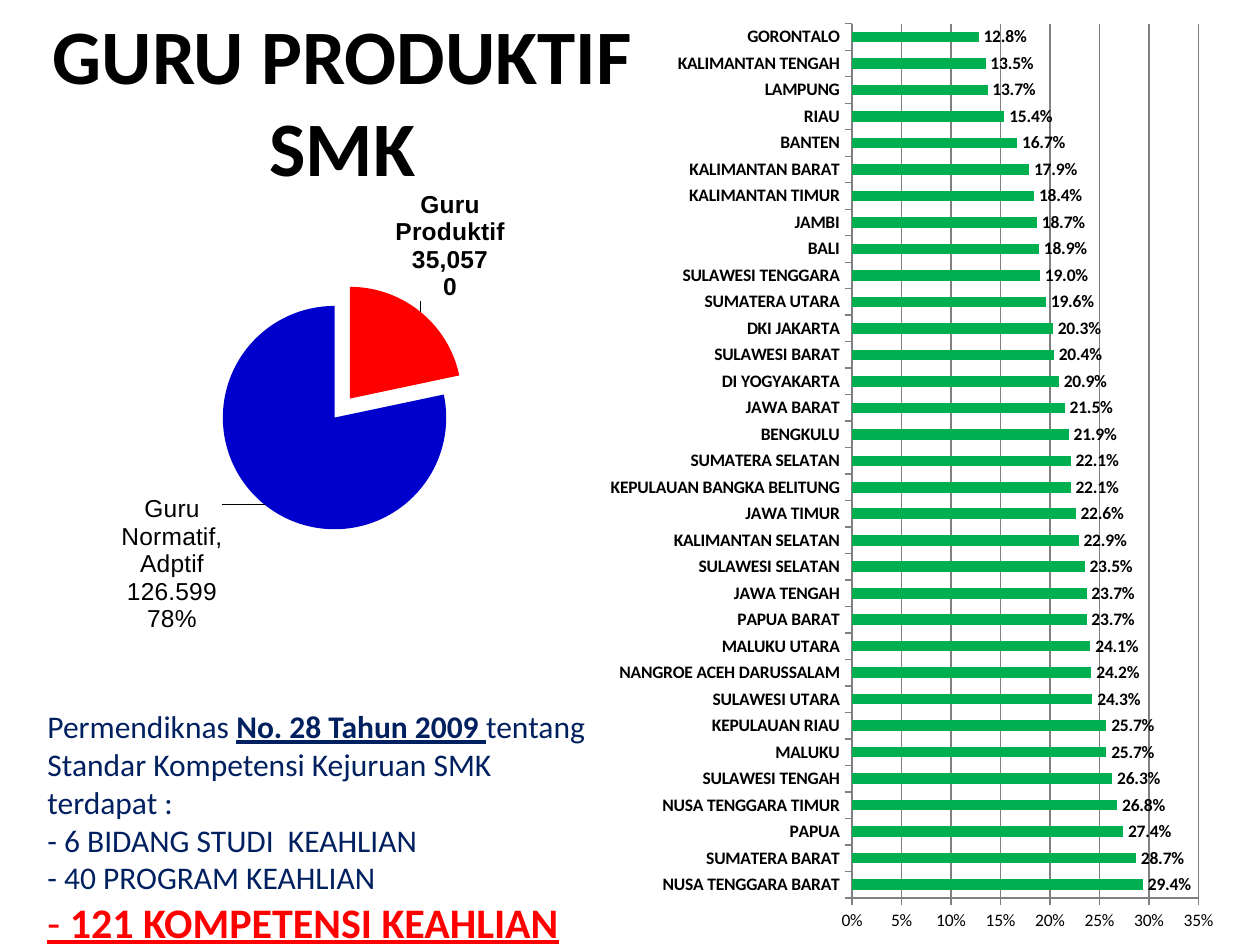
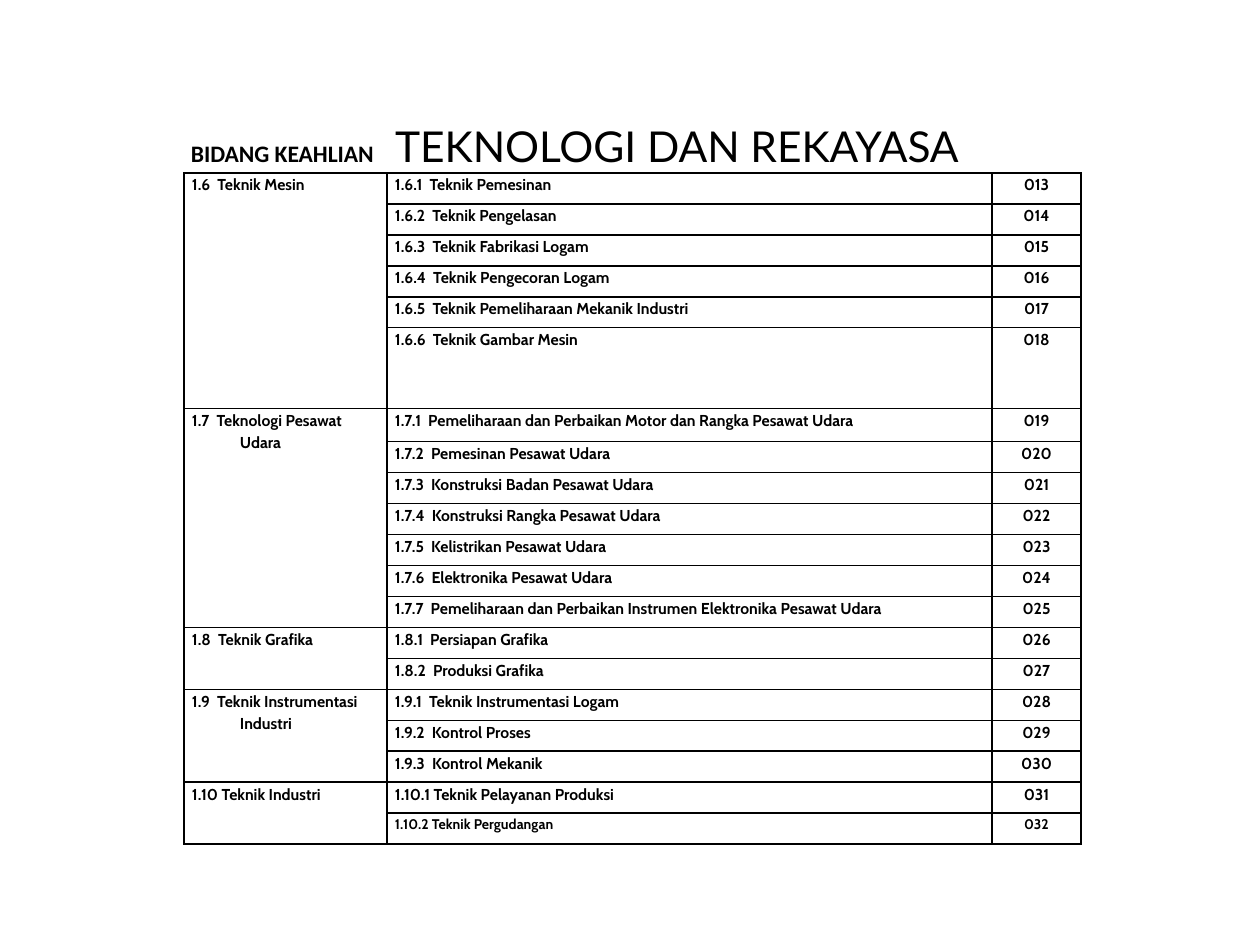
from dataclasses import dataclass

from lxml import etree
from pptx import Presentation
from pptx.chart.data import CategoryChartData
from pptx.dml.color import RGBColor
from pptx.enum.chart import XL_CHART_TYPE, XL_LABEL_POSITION, XL_TICK_MARK
from pptx.enum.text import MSO_ANCHOR, PP_ALIGN
from pptx.oxml.ns import qn
from pptx.util import Emu, Pt

PX = 914400 / 126
BAR, PIE = XL_CHART_TYPE.BAR_CLUSTERED, XL_CHART_TYPE.PIE
OUTER = XL_LABEL_POSITION.OUTSIDE_END
TICK_OUT, TICK_OFF = XL_TICK_MARK.OUTSIDE, XL_TICK_MARK.NONE
TOP, MIDDLE = MSO_ANCHOR.TOP, MSO_ANCHOR.MIDDLE
LEFT, CENTER = PP_ALIGN.LEFT, PP_ALIGN.CENTER


@dataclass(frozen=True)
class Theme:
    black: str = "000000"
    navy: str = "002060"
    red: str = "FF0000"
    blue: str = "0000CC"
    green: str = "00B050"
    gray: str = "808080"
    body: str = "Calibri"
    grid: str = "Cabin"
    label: str = "Arial"
    light: str = "Lato"
    title: float = 44
    text: float = 18
    strong: float = 24
    axis: float = 10
    slice: float = 14
    cell: float = 9
    small: float = 8


THEME = Theme()


def px(n):
    return Emu(round(n * PX))


def style(font, size=THEME.axis, face=THEME.body, color=THEME.black,
          bold=False, under=False):
    font.size, font.name, font.bold = Pt(size), face, bold
    font.color.rgb = RGBColor.from_string(color)
    if under:
        font.underline = True


def put(para, text, **form):
    """Add one run of text to a paragraph."""
    run = para.add_run()
    run.text = text
    style(run.font, **form)


def add(parent, tag, **attrs):
    return etree.SubElement(parent, qn(tag), attrs)


def layout(x, y, w=None, h=None):
    """Chart layout; with a size it frames the plot, else it shifts a label."""
    root = etree.Element(qn("c:layout"))
    man = add(root, "c:manualLayout")
    if w:
        add(man, "c:layoutTarget", val="inner")
        add(man, "c:xMode", val="edge")
        add(man, "c:yMode", val="edge")
    for key, val in zip("xywh", (x, y, w, h)):
        if val is not None:
            add(man, f"c:{key}", val=str(val))
    return root


class Deck:
    def __init__(self, theme):
        self.theme = theme
        self.prs = Presentation()
        self.prs.slide_width, self.prs.slide_height = px(1260), px(945)
        self.slide = None

    def page(self):
        self.slide = self.prs.slides.add_slide(self.prs.slide_layouts[6])

    def text(self, box, paras, anchor=TOP, align=LEFT):
        """Each paragraph is a list of (text, format) runs."""
        frame = self.slide.shapes.add_textbox(*map(px, box)).text_frame
        frame.word_wrap, frame.vertical_anchor = True, anchor
        for i, runs in enumerate(paras):
            para = frame.add_paragraph() if i else frame.paragraphs[0]
            para.alignment = align
            for words, form in runs:
                put(para, words, **form)

    def title(self, box, runs):
        self.text(box, [runs], MIDDLE, CENTER)

    def chart(self, kind, box, names, vals, plot, form):
        data = CategoryChartData(number_format=form)
        data.categories = names
        data.add_series("Series 1", vals)
        chart = self.slide.shapes.add_chart(kind, *map(px, box), data).chart
        chart.has_legend = chart.has_title = False
        style(chart.font)
        area = chart.plots[0]
        area.vary_by_categories = kind == PIE
        root = chart._chartSpace.chart.plotArea
        for old in root.findall(qn("c:layout")):
            root.remove(old)
        root.insert(0, layout(*plot))
        return chart, area.series[0]

    def bars(self, box, names, vals, plot):
        chart, series = self.chart(BAR, box, names, vals, plot, "0.0%")
        chart.plots[0].gap_width = 150
        series.format.fill.solid()
        series.format.fill.fore_color.rgb = RGBColor.from_string(self.theme.green)
        tags = series.data_labels
        tags.show_value, tags.position = True, OUTER
        tags.number_format, tags.number_format_is_linked = "0.0%", False
        style(tags.font, bold=True)
        cat, val = chart.category_axis, chart.value_axis
        val.minimum_scale, val.maximum_scale, val.major_unit = 0, 0.35, 0.05
        val.has_major_gridlines = True
        val.tick_labels.number_format = "0%"
        val.tick_labels.number_format_is_linked = False
        for axis in (cat, val):
            axis.major_tick_mark, axis.minor_tick_mark = TICK_OUT, TICK_OFF
            style(axis.tick_labels.font, bold=axis is cat)
        for part in (cat, val, val.major_gridlines):
            part.format.line.color.rgb = RGBColor.from_string(self.theme.gray)
            part.format.line.width = Pt(0.75)

    def pie(self, box, names, vals, plot, hues, note, shifts):
        _, series = self.chart(PIE, box, names, vals, plot, "#,##0")
        root = series._element
        burst = etree.Element(qn("c:explosion"), val="11")
        root.find(qn("c:tx")).addnext(burst)
        for i, hue in enumerate(hues):
            fill = series.points[i].format.fill
            fill.solid()
            fill.fore_color.rgb = RGBColor.from_string(hue)
        look = dict(size=self.theme.slice, face=self.theme.label)
        tags = series.data_labels
        tags.show_value = tags.show_category_name = tags.show_percentage = True
        tags.number_format, tags.number_format_is_linked = "#,##0", False
        style(tags.font, bold=True, **look)
        # First label keeps its fields, the second has its own words
        first, last = (series.points[i].data_label for i in range(2))
        style(first.font, bold=True, **look)
        frame = last.text_frame
        for i, line in enumerate(note):
            para = frame.add_paragraph() if i else frame.paragraphs[0]
            put(para, line, **look)
        for tag in (first, last):
            tag.position = OUTER
        for tag, shift in zip(root.iter(qn("c:dLbl")), shifts):
            tag.find(qn("c:idx")).addnext(layout(*shift))
            for key in ("c:showVal", "c:showCatName", "c:showPercent"):
                tag.find(qn(key)).set("val", "1")
            add(tag, "c:separator").text = "\n"

    def cell(self, cell, text, align=LEFT, size=THEME.cell):
        cell.fill.background()
        cell.margin_left = cell.margin_right = px(8)
        cell.margin_top = cell.margin_bottom = 0
        para = cell.text_frame.paragraphs[0]
        para.alignment, para.line_spacing = align, 1.15
        para.space_before = para.space_after = Pt(3)
        if align == LEFT:
            props = para._p.get_or_add_pPr()
            props.set("marL", str(px(48)))
            props.set("indent", str(px(-48)))
        put(para, text, size=size, face=self.theme.grid, bold=True)
        props = cell._tc.get_or_add_tcPr()
        for i, side in enumerate(("a:lnL", "a:lnR", "a:lnT", "a:lnB")):
            line = etree.Element(qn(side), w=str(Pt(1)))
            add(add(line, "a:solidFill"), "a:srgbClr", val=self.theme.black)
            props.insert(i, line)

    def table(self, spot, cols, rows, groups, start):
        """Merge the first column by group and number the items on the right."""
        size = (sum(cols), sum(rows))
        table = self.slide.shapes.add_table(
            len(rows), len(cols), *map(px, spot + size)).table
        table.first_row = table.horz_banding = False
        for part, sizes in ((table.columns, cols), (table.rows, rows)):
            for item, n in zip(part, sizes):
                if part is table.columns:
                    item.width = px(n)
                else:
                    item.height = px(n)
        row = 0
        for head, items in groups:
            table.cell(row, 0).merge(table.cell(row + len(items) - 1, 0))
            for i, item in enumerate(items):
                last = row == len(rows) - 1
                small = self.theme.small if last else self.theme.cell
                self.cell(table.cell(row, 0), "" if i else head)
                self.cell(table.cell(row, 1), item, size=small)
                self.cell(table.cell(row, 2), f"{start + row:03}", CENTER, small)
                row += 1


# Share of vocational teachers by province, bottom bar first
SHARES = {
    "NUSA TENGGARA BARAT": 0.294, "SUMATERA BARAT": 0.287, "PAPUA": 0.274,
    "NUSA TENGGARA TIMUR": 0.268, "SULAWESI TENGAH": 0.263, "MALUKU": 0.257,
    "KEPULAUAN RIAU": 0.257, "SULAWESI UTARA": 0.243,
    "NANGROE ACEH DARUSSALAM": 0.242, "MALUKU UTARA": 0.241,
    "PAPUA BARAT": 0.237, "JAWA TENGAH": 0.237, "SULAWESI SELATAN": 0.235,
    "KALIMANTAN SELATAN": 0.229, "JAWA TIMUR": 0.226,
    "KEPULAUAN BANGKA BELITUNG": 0.221, "SUMATERA SELATAN": 0.221,
    "BENGKULU": 0.219, "JAWA BARAT": 0.215, "DI YOGYAKARTA": 0.209,
    "SULAWESI BARAT": 0.204, "DKI JAKARTA": 0.203, "SUMATERA UTARA": 0.196,
    "SULAWESI TENGGARA": 0.19, "BALI": 0.189, "JAMBI": 0.187,
    "KALIMANTAN TIMUR": 0.184, "KALIMANTAN BARAT": 0.179, "BANTEN": 0.167,
    "RIAU": 0.154, "LAMPUNG": 0.137, "KALIMANTAN TENGAH": 0.135,
    "GORONTALO": 0.128,
}

GROUPS = [
    ("1.6  Teknik Mesin", [
        "1.6.1  Teknik Pemesinan", "1.6.2  Teknik Pengelasan",
        "1.6.3  Teknik Fabrikasi Logam", "1.6.4  Teknik Pengecoran Logam",
        "1.6.5  Teknik Pemeliharaan Mekanik Industri",
        "1.6.6  Teknik Gambar Mesin"]),
    ("1.7  Teknologi Pesawat Udara", [
        "1.7.1  Pemeliharaan dan Perbaikan Motor dan Rangka Pesawat Udara",
        "1.7.2  Pemesinan Pesawat Udara",
        "1.7.3  Konstruksi Badan Pesawat Udara",
        "1.7.4  Konstruksi Rangka Pesawat Udara",
        "1.7.5  Kelistrikan Pesawat Udara",
        "1.7.6  Elektronika Pesawat Udara",
        "1.7.7  Pemeliharaan dan Perbaikan Instrumen Elektronika Pesawat Udara"]),
    ("1.8  Teknik Grafika", [
        "1.8.1  Persiapan Grafika", "1.8.2  Produksi Grafika"]),
    ("1.9  Teknik Instrumentasi Industri", [
        "1.9.1  Teknik Instrumentasi Logam", "1.9.2  Kontrol Proses",
        "1.9.3  Kontrol Mekanik"]),
    ("1.10 Teknik Industri", [
        "1.10.1 Teknik Pelayanan Produksi", "1.10.2 Teknik Pergudangan"]),
]


def staff(deck):
    theme = deck.theme
    deck.page()
    deck.title((25, -4, 635, 208),
               [("GURU PRODUKTIF SMK", dict(size=theme.title, bold=True))])
    deck.bars((600, 5, 630, 940), list(SHARES), list(SHARES.values()),
              (0.4, 0.02, 0.55, 0.93))
    deck.pie((-35, 175, 740, 496),
             ["Guru Produktif", "Guru Normatif, Adptif"], [35057, 126599],
             (0.34, 0.22, 0.34, 0.5), (theme.red, theme.blue),
             ("Guru", "Normatif,", "Adptif", "126.599", "78%"),
             ((-0.04, -0.01), (-0.05, -0.03)))
    # Rule and its three counts
    plain = dict(size=theme.text, color=theme.navy)
    alert = dict(size=theme.strong, color=theme.red, under=True)
    deck.text((35, 701, 586, 217), [
        [("Permendiknas ", plain),
         ("No. 28 Tahun 2009 ", dict(plain, bold=True, under=True)),
         ("tentang Standar Kompetensi Kejuruan SMK terdapat :", plain)],
        [("- 6 BIDANG STUDI  KEAHLIAN", plain)],
        [("- 40 PROGRAM KEAHLIAN", plain)],
        [("- ", alert), ("121 KOMPETENSI KEAHLIAN", dict(alert, bold=True))],
    ])


def fields(deck):
    deck.page()
    deck.table((184, 173), (203, 605, 89),
               [31] * 5 + [81, 33] + [31] * 13, GROUPS, 13)
    deck.title((52, 118, 1046, 52), [
        ("BIDANG KEAHLIAN", dict(size=13.5, bold=True)),
        ("  ", dict(size=27, bold=True)),
        ("TEKNOLOGI DAN REKAYASA", dict(size=24.3, face=deck.theme.light))])


def main():
    deck = Deck(THEME)
    staff(deck)
    fields(deck)
    deck.prs.save("out.pptx")


if __name__ == "__main__":
    main()
